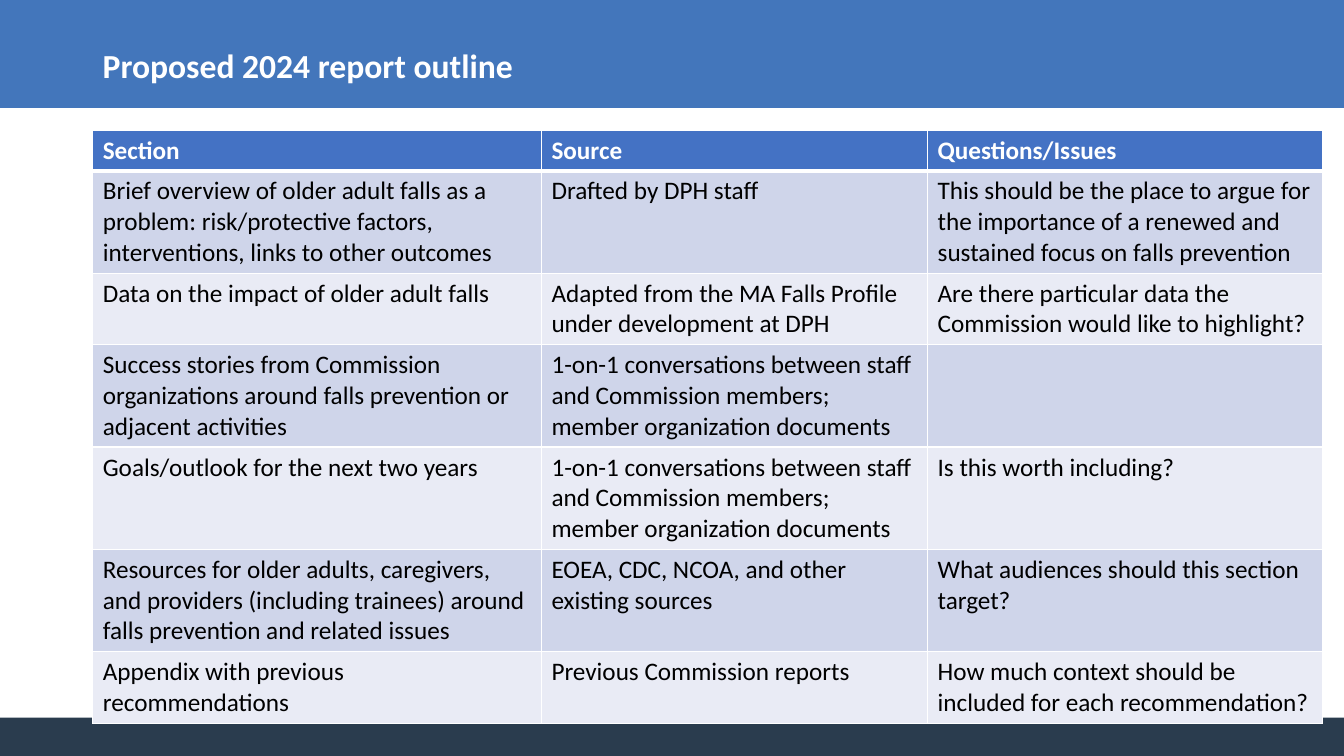
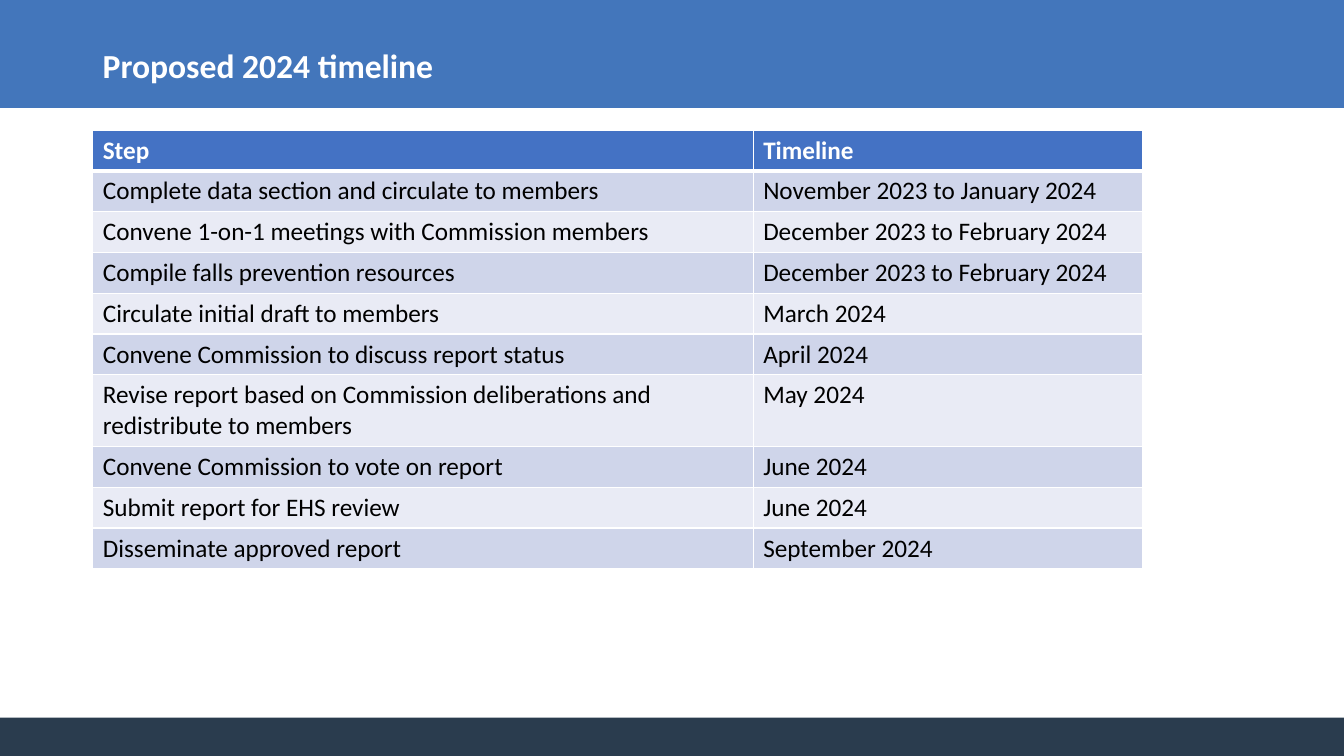
from dataclasses import dataclass

from lxml import etree
from pptx import Presentation
from pptx.dml.color import RGBColor
from pptx.enum.shapes import MSO_SHAPE
from pptx.enum.text import MSO_ANCHOR
from pptx.oxml.ns import qn
from pptx.util import Inches, Pt

RECTANGLE = MSO_SHAPE.RECTANGLE
BOTTOM = MSO_ANCHOR.BOTTOM


@dataclass(frozen=True)
class Theme:
    font: str = "Calibri"
    title_size: int = 24
    table_size: int = 18
    top_band: str = "4376BB"
    bottom_band: str = "2A3C4E"
    header: str = "4472C4"
    stripes: tuple = ("CFD5EA", "E9EBF5")
    light: str = "FFFFFF"
    dark: str = "000000"
    border: int = 1
    header_border: int = 3


THEME = Theme()
WIDTH, HEIGHT = 13.33, 7.5
TOP_BAND, BOTTOM_BAND = 1.07, 0.38
LEFT, TABLE_TOP = 0.92, 1.29
CELL_PADDING, LINE_HEIGHT = 0.1, 0.305

CONVERSATIONS = ("1-on-1 conversations between staff and Commission members; "
                 "member organization documents")

# Each row is its number of text lines followed by its cells.
SLIDES = [
    {
        "title": "Proposed 2024 report outline",
        "columns": (4.45, 3.83, 3.92),
        "rows": [
            (1, "Section", "Source", "Questions/Issues"),
            (3, "Brief overview of older adult falls as a problem: risk/protective factors, "
                "interventions, links to other outcomes",
             "Drafted by DPH staff",
             "This should be the place to argue for the importance of a renewed and "
             "sustained focus on falls prevention"),
            (2, "Data on the impact of older adult falls",
             "Adapted from the MA Falls Profile under development at DPH",
             "Are there particular data the Commission would like to highlight?"),
            (3, "Success stories from Commission organizations around falls prevention or "
                "adjacent activities",
             CONVERSATIONS, ""),
            (3, "Goals/outlook for the next two years", CONVERSATIONS,
             "Is this worth including?"),
            (3, "Resources for older adults, caregivers, and providers (including trainees) "
                "around falls prevention and related issues",
             "EOEA, CDC, NCOA, and other existing sources",
             "What audiences should this section target?"),
            (2, "Appendix with previous recommendations", "Previous Commission reports",
             "How much context should be included for each recommendation?"),
        ],
    },
    {
        "title": "Proposed 2024 timeline",
        "columns": (6.55, 3.86),
        "rows": [
            (1, "Step", "Timeline"),
            (1, "Complete data section and circulate to members",
             "November 2023 to January 2024"),
            (1, "Convene 1-on-1 meetings with Commission members",
             "December 2023 to February 2024"),
            (1, "Compile falls prevention resources", "December 2023 to February 2024"),
            (1, "Circulate initial draft to members", "March 2024"),
            (1, "Convene Commission to discuss report status", "April 2024"),
            (2, "Revise report based on Commission deliberations and redistribute to members",
             "May 2024"),
            (1, "Convene Commission to vote on report", "June 2024"),
            (1, "Submit report for EHS review", "June 2024"),
            (1, "Disseminate approved report", "September 2024"),
        ],
    },
]


def style_text(text_frame, size, color, bold):
    for paragraph in text_frame.paragraphs:
        for span in paragraph.runs:
            span.font.name = THEME.font
            span.font.size = Pt(size)
            span.font.bold = bold
            span.font.color.rgb = RGBColor.from_string(color)


def add_band(page, top, height, color):
    band = page.shapes.add_shape(RECTANGLE, 0, Inches(top), Inches(WIDTH), Inches(height))
    band.shadow.inherit = False
    band.fill.solid()
    band.fill.fore_color.rgb = RGBColor.from_string(color)
    band.line.fill.background()


def add_title(page, title):
    box = page.shapes.add_textbox(Inches(LEFT), 0, Inches(8.98), Inches(0.9))
    frame = box.text_frame
    frame.word_wrap = True
    frame.vertical_anchor = BOTTOM
    frame.text = title
    frame.paragraphs[0].line_spacing = 0.9
    style_text(frame, THEME.title_size, THEME.light, True)


def add_borders(cell, top, bottom):
    """Draw the four cell edges; must run before the cell gets its fill."""
    properties = cell._tc.get_or_add_tcPr()
    widths = {"a:lnL": THEME.border, "a:lnR": THEME.border, "a:lnT": top, "a:lnB": bottom}
    for tag, width in widths.items():
        edge = etree.SubElement(properties, qn(tag), w=str(Pt(width)))
        fill = etree.SubElement(edge, qn("a:solidFill"))
        etree.SubElement(fill, qn("a:srgbClr"), val=THEME.light)


def style_cell(cell, row_index):
    is_header = row_index == 0
    add_borders(cell,
                THEME.header_border if row_index == 1 else THEME.border,
                THEME.header_border if is_header else THEME.border)
    color = THEME.header if is_header else THEME.stripes[(row_index - 1) % 2]
    cell.fill.solid()
    cell.fill.fore_color.rgb = RGBColor.from_string(color)
    style_text(cell.text_frame, THEME.table_size,
               THEME.light if is_header else THEME.dark, is_header)


def add_table(page, columns, rows):
    heights = [CELL_PADDING + LINE_HEIGHT * lines for lines, *_ in rows]
    table = page.shapes.add_table(
        len(rows), len(columns), Inches(LEFT), Inches(TABLE_TOP),
        Inches(sum(columns)), Inches(sum(heights))).table
    for column, width in zip(table.columns, columns):
        column.width = Inches(width)
    for row_index, (_, *texts) in enumerate(rows):
        table.rows[row_index].height = Inches(heights[row_index])
        for cell, text in zip(table.rows[row_index].cells, texts):
            cell.text = text
            style_cell(cell, row_index)


def main():
    deck = Presentation()
    deck.slide_width, deck.slide_height = Inches(WIDTH), Inches(HEIGHT)
    blank = deck.slide_layouts[6]
    for content in SLIDES:
        page = deck.slides.add_slide(blank)
        add_band(page, 0, TOP_BAND, THEME.top_band)
        add_band(page, HEIGHT - BOTTOM_BAND, BOTTOM_BAND, THEME.bottom_band)
        add_title(page, content["title"])
        add_table(page, content["columns"], content["rows"])
    deck.save("out.pptx")


if __name__ == "__main__":
    main()
